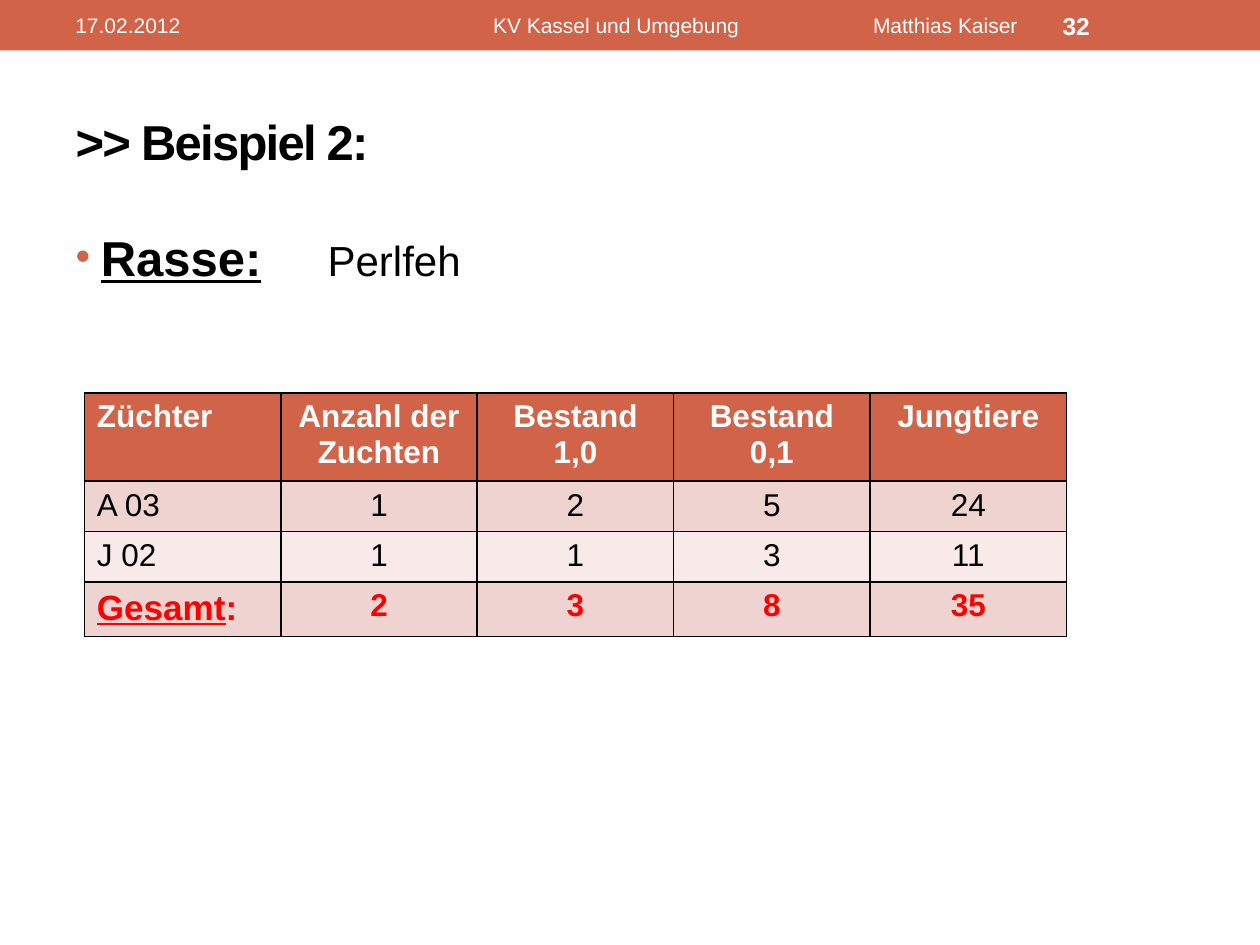
import dataclasses
import typing

import lxml.etree
import pptx
import pptx.dml.color
import pptx.enum.shapes
import pptx.enum.text
import pptx.oxml.ns
import pptx.util

Cm = pptx.util.Cm
Pt = pptx.util.Pt
ALIGN = pptx.enum.text.PP_ALIGN
ANCHOR = pptx.enum.text.MSO_ANCHOR

COLORS = {
    "accent": "D16349",
    "band_dark": "EED3D0",
    "band_light": "F7EAE9",
    "white": "FFFFFF",
    "black": "000000",
    "total": "FF0000",
}


@dataclasses.dataclass
class HeaderText:
    text: str
    left: float
    width: float
    size: float = 12
    bold: bool = False
    inset: float = 0.25
    tab: typing.Optional[float] = None


@dataclasses.dataclass
class TableRow:
    values: tuple[str, ...]
    height: float
    fill: str
    color: str = "black"
    bold: bool = False


HEADER_TEXTS = [
    HeaderText("17.02.2012", 1.27, 8.06),
    HeaderText("KV Kassel und Umgebung\tMatthias Kaiser", 9.53, 11.43, inset=0.41, tab=7.66),
    HeaderText("32", 21.17, 2.96, size=14, bold=True),
]

TABLE_ROWS = [
    TableRow(("Züchter", "Anzahl der Zuchten", "Bestand 1,0", "Bestand 0,1", "Jungtiere"),
             1.68, "accent", "white", True),
    TableRow(("A 03", "1", "2", "5", "24"), 0.97, "band_dark"),
    TableRow(("J 02", "1", "1", "3", "11"), 0.97, "band_light"),
    TableRow(("Gesamt:", "2", "3", "8", "35"), 1.05, "band_dark", "total", True),
]


def rgb(name: str) -> pptx.dml.color.RGBColor:
    return pptx.dml.color.RGBColor.from_string(COLORS[name])


def add_element(parent, tag: str, **attributes: str):
    element = lxml.etree.SubElement(parent, pptx.oxml.ns.qn(tag))
    for name, value in attributes.items():
        element.set(name, value)
    return element


def add_color(parent, name: str) -> None:
    add_element(parent, "a:srgbClr", val=COLORS[name])


def write_text(paragraph, text: str, *, size: float, color: str = "black", bold: bool = False,
               underline: bool = False, align=ALIGN.LEFT, spacing: float = 0) -> None:
    paragraph.alignment = align
    run = paragraph.add_run()
    run.text = text
    run.font.name = "Arial"
    run.font.size = Pt(size)
    run.font.bold = bold
    run.font.underline = underline
    run.font.color.rgb = rgb(color)
    if spacing:
        run.font._element.set("spc", str(round(spacing * 100)))


def add_tab(paragraph, position: float) -> None:
    tabs = add_element(paragraph._p.get_or_add_pPr(), "a:tabLst")
    add_element(tabs, "a:tab", pos=str(Cm(position)), algn="l")


def add_bullet(paragraph) -> None:
    properties = paragraph._p.get_or_add_pPr()
    properties.set("marL", str(Cm(0.51)))
    properties.set("indent", str(-Cm(0.51)))
    add_color(add_element(properties, "a:buClr"), "accent")
    add_element(properties, "a:buSzPct", val="85000")
    add_element(properties, "a:buFont", typeface="Arial")
    add_element(properties, "a:buChar", char="•")


def place(shape, left: float, top: float, width: float, height: float) -> None:
    shape.left, shape.top = Cm(left), Cm(top)
    shape.width, shape.height = Cm(width), Cm(height)


def draw_header(slide) -> None:
    band = slide.shapes.add_shape(pptx.enum.shapes.MSO_SHAPE.RECTANGLE, 0, 0, Cm(25.4), Cm(1.02))
    band.shadow.inherit = False
    band.fill.solid()
    band.fill.fore_color.rgb = rgb("accent")
    band.line.fill.background()
    for item in HEADER_TEXTS:
        box = slide.shapes.add_textbox(Cm(item.left), Cm(0.06), Cm(item.width), Cm(0.91))
        frame = box.text_frame
        frame.word_wrap = True
        frame.vertical_anchor = ANCHOR.MIDDLE
        frame.margin_left = Cm(item.inset)
        paragraph = frame.paragraphs[0]
        if item.tab:
            add_tab(paragraph, item.tab)
        write_text(paragraph, item.text, size=item.size, color="white", bold=item.bold)


def draw_title_and_body(slide) -> None:
    title = slide.shapes.title
    place(title, 1.27, 1.47, 22.86, 2.74)
    title.text_frame.vertical_anchor = ANCHOR.MIDDLE
    write_text(title.text_frame.paragraphs[0], ">> Beispiel 2:", size=28, bold=True, spacing=-1)

    body = slide.placeholders[1]
    place(body, 1.27, 4.45, 22.86, 13.54)
    body.text_frame.auto_size = pptx.enum.text.MSO_AUTO_SIZE.NONE
    paragraph = body.text_frame.paragraphs[0]
    add_bullet(paragraph)
    add_tab(paragraph, 5.08)
    write_text(paragraph, "Rasse:", size=28, bold=True, underline=True)
    write_text(paragraph, "\tPerlfeh", size=24)


def format_cell(cell, fill: str) -> None:
    properties = cell._tc.get_or_add_tcPr()
    for side in ("a:lnL", "a:lnR", "a:lnT", "a:lnB"):
        line = add_element(properties, side, w=str(Pt(1)))
        add_color(add_element(line, "a:solidFill"), "black")
    cell.fill.solid()
    cell.fill.fore_color.rgb = rgb(fill)


def draw_table(slide) -> None:
    column_count = len(TABLE_ROWS[0].values)
    height = sum(row.height for row in TABLE_ROWS)
    table = slide.shapes.add_table(len(TABLE_ROWS), column_count, Cm(1.7), Cm(7.92),
                                   Cm(3.96 * column_count), Cm(height)).table
    for column in table.columns:
        column.width = Cm(3.96)
    for row_index, row in enumerate(TABLE_ROWS):
        table.rows[row_index].height = Cm(row.height)
        for column_index, value in enumerate(row.values):
            cell = table.cell(row_index, column_index)
            format_cell(cell, row.fill)
            paragraph = cell.text_frame.paragraphs[0]
            if value == "Gesamt:":
                write_text(paragraph, value[:-1], size=20, color=row.color, bold=True, underline=True)
                write_text(paragraph, value[-1], size=20, color=row.color, bold=True)
            else:
                write_text(paragraph, value, size=18, color=row.color, bold=row.bold,
                           align=ALIGN.CENTER if column_index else ALIGN.LEFT)


def main() -> None:
    presentation = pptx.Presentation()
    presentation.slide_width, presentation.slide_height = Cm(25.4), Cm(19.05)
    slide = presentation.slides.add_slide(presentation.slide_layouts[1])
    draw_header(slide)
    draw_title_and_body(slide)
    draw_table(slide)
    presentation.save("out.pptx")


if __name__ == "__main__":
    main()
